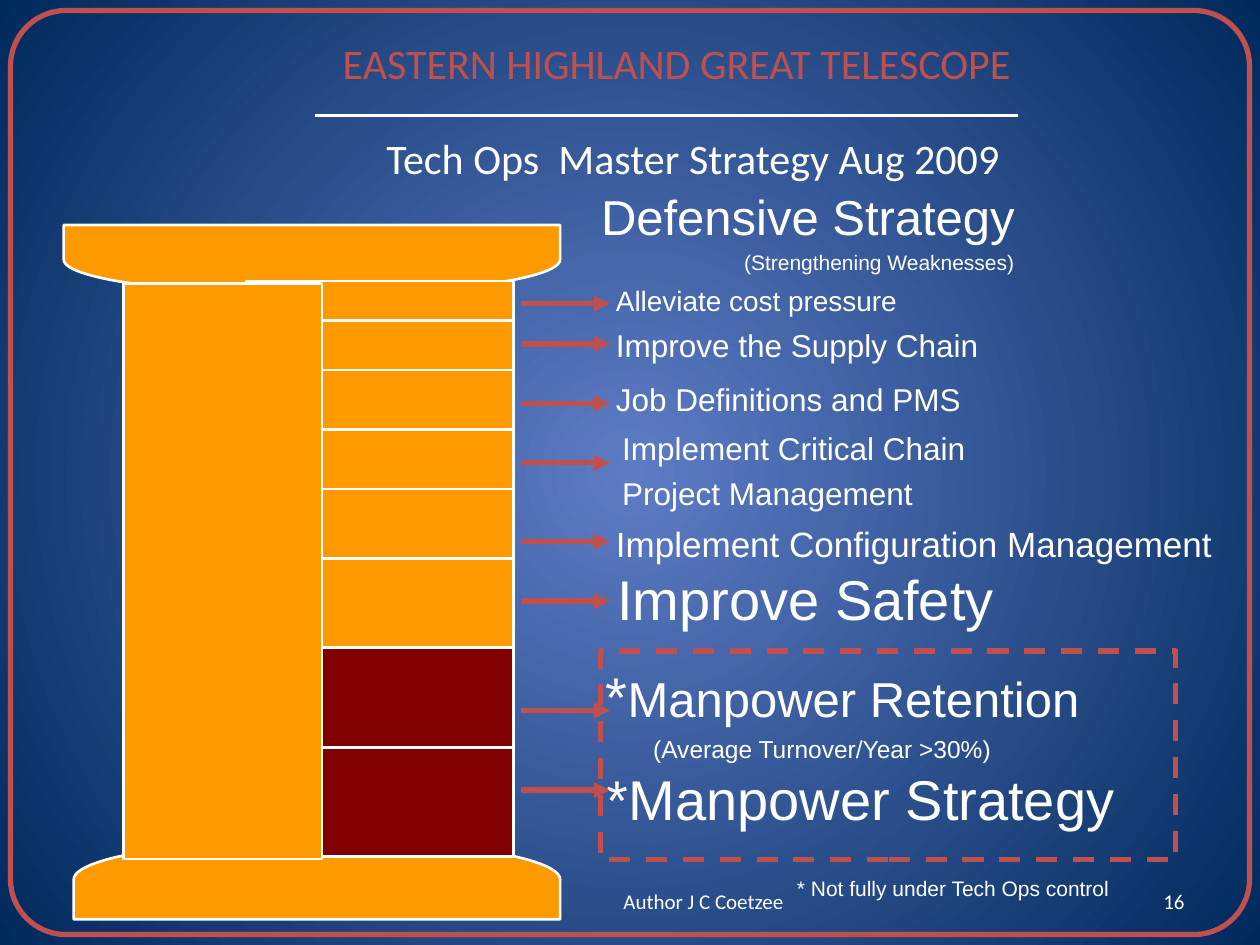
import pptx
import pptx.util
import pptx.dml.color
import pptx.oxml
import pptx.oxml.ns
from pptx.enum.dml import MSO_LINE
from pptx.enum.shapes import MSO_CONNECTOR, MSO_SHAPE
from pptx.enum.text import MSO_ANCHOR, MSO_AUTO_SIZE, PP_ALIGN

Pt = pptx.util.Pt
qn = pptx.oxml.ns.qn
WHITE, RED, ORANGE, MAROON = "FFFFFF", "C0504D", "FF9900", "800000"
L, C, R = PP_ALIGN.LEFT, PP_ALIGN.CENTER, PP_ALIGN.RIGHT
HANG = 27

TITLE = "EASTERN HIGHLAND GREAT TELESCOPE"

# text, size, alignment, (left, top, width, height), anchor
CALIBRI_TEXTS = [
    ("Author J C Coetzee", 12, C, (288, 500.4, 228, 28.8), MSO_ANCHOR.MIDDLE),
    ("16", 12, R, (516, 500.4, 168, 28.8), MSO_ANCHOR.MIDDLE),
    ("Tech Ops  Master Strategy Aug 2009", 24, C, (144, 72, 504, 36), MSO_ANCHOR.TOP),
]

# box, alignment, wraps, paragraphs of (text, size) runs
STRATEGIES = [
    ((339.8, 433.4, 307.4, 46), L, False, [[("*Manpower Strategy", 32)]]),
    ((339.1, 374.4, 344.9, 66.2), L, True,
     [[("*", 32), ("Manpower Retention", 28)],
      [("\t(Average Turnover/Year >30%)", 14)]]),
    ((345.6, 319, 231.8, 46), L, False, [[("Improve Safety", 32)]]),
    ((344.9, 295.2, 357.8, 31.7), L, False,
     [[("Implement Configuration Management", 20)]]),
    ((348.5, 241.9, 221, 54.7), L, True,
     [[("Implement Critical Chain", 18)], [("Project Management", 18)]]),
    ((344.9, 213.8, 213.8, 28.8), L, False, [[("Job Definitions and PMS", 18)]]),
    ((344.9, 182.9, 223.9, 28.8), L, False, [[("Improve the Supply Chain", 18)]]),
    ((344.9, 158.4, 190, 26.6), L, False, [[("Alleviate cost pressure", 16)]]),
    ((447.1, 496.8, 195.1, 21.6), C, False,
     [[("* Not fully under Tech Ops control", 12)]]),
    ((252, 103, 334.8, 115.9), R, True,
     [[("Defensive Strategy", 28)], [("(Strengthening Weaknesses)", 12)]]),
]

BLOCK_EDGES = [160.5, 183, 211.5, 245.5, 279.5, 319, 370, 427, 489.5]
BLOCK_LEFT, BLOCK_WIDTH, MAROON_BLOCKS = 140.5, 153, 2
ARROW_YS = [173.5, 196.5, 230.5, 264.5, 309.5, 343.5, 406, 451.5]
ARROW_FROM, ARROW_TO = 297.5, 348.5


def rgb(color):
    return pptx.dml.color.RGBColor.from_string(color)


def set_line(line, color, width):
    line.color.rgb = rgb(color)
    line.width = Pt(width)


def add_box(kind, box, fill=None, line=WHITE, width=1.5, rotation=0):
    sp = s.shapes.add_shape(kind, *map(Pt, box))
    sp.shadow.inherit = False
    sp.rotation = rotation
    if fill:
        sp.fill.solid()
        sp.fill.fore_color.rgb = rgb(fill)
    else:
        sp.fill.background()
    set_line(sp.line, line, width)
    return sp


def add_line(x1, y1, x2, y2, color, width, arrow=False):
    cn = s.shapes.add_connector(MSO_CONNECTOR.STRAIGHT, *map(Pt, (x1, y1, x2, y2)))
    set_line(cn.line, color, width)
    props = cn._element.spPr
    if arrow:
        ln = props.find(qn("a:ln"))
        ln.append(ln.makeelement(qn("a:tailEnd"), {"type": "triangle"}))
    props.append(props.makeelement(qn("a:effectLst"), {}))


def fill_text(sp, paragraphs, align=L, font="Arial", color=WHITE, wrap=True,
              anchor=MSO_ANCHOR.TOP, grow=True, spaced=True, hang=0):
    """Write paragraphs of (text, size) runs; spaced puts 20% before each."""
    tf = sp.text_frame
    frame = {"word_wrap": wrap, "vertical_anchor": anchor,
             "auto_size": MSO_AUTO_SIZE.SHAPE_TO_FIT_TEXT if grow else MSO_AUTO_SIZE.NONE}
    for name, value in frame.items():
        setattr(tf, name, value)
    for i, runs in enumerate(paragraphs):
        p = tf.add_paragraph() if i else tf.paragraphs[0]
        p.alignment = align
        p.space_before = Pt(0)
        pPr = p._p.get_or_add_pPr()
        if spaced:
            before = pPr.find(qn("a:spcBef"))
            before.remove(before[0])
            before.append(before.makeelement(qn("a:spcPct"), {"val": "20000"}))
        if hang:
            pPr.set("marL", str(Pt(hang)))
            pPr.set("indent", str(-Pt(hang)))
        for text, size in runs:
            r = p.add_run()
            r.text = text
            for name, value in {"name": font, "size": Pt(size), "bold": False}.items():
                setattr(r.font, name, value)
            r.font.color.rgb = rgb(color)


def set_background():
    """Radial gradient from the slide's centre."""
    fill = s.background.fill
    fill.gradient()
    for stop, color in zip(fill.gradient_stops, ("5E7CC5", "00295C")):
        stop.color.rgb = rgb(color)
    grad = s._element.find(".//" + qn("a:gradFill"))
    linear = grad.find(qn("a:lin"))
    circle = grad.makeelement(qn("a:path"), {"path": "circle"})
    sides = dict.fromkeys("ltrb", "50000")
    circle.append(circle.makeelement(qn("a:fillToRect"), sides))
    grad.replace(linear, circle)


prs = pptx.Presentation()
prs.slide_width, prs.slide_height = Pt(720), Pt(540)
s = prs.slides.add_slide(prs.slide_layouts[5])
set_background()

title = s.shapes.title
title.left, title.top, title.width, title.height = map(Pt, (131.8, 18, 509.8, 36))
fill_text(title, [[(TITLE, 24)]], C, "Calibri", RED, spaced=False)
add_line(180, 66, 582, 66, WHITE, 2)
border = add_box(MSO_SHAPE.ROUNDED_RECTANGLE, (6, 6, 708, 528), line=RED, width=3)
border.adjustments[0] = 0.06

for text, size, align, box, anchor in CALIBRI_TEXTS:
    fill_text(s.shapes.add_textbox(*map(Pt, box)), [[(text, size)]], align, "Calibri",
              anchor=anchor, grow=False, spaced=anchor == MSO_ANCHOR.TOP)

# Pillar: base, capital, blocks, then the shaft in front
add_box(MSO_SHAPE.FLOWCHART_DELAY, (158.4, 363.6, 45.4, 278), ORANGE, rotation=270)
add_box(MSO_SHAPE.FLOWCHART_DELAY, (158.4, 6.5, 39.6, 283.7), ORANGE, rotation=90)
last_orange = len(BLOCK_EDGES) - 1 - MAROON_BLOCKS
for i, (top, bottom) in enumerate(zip(BLOCK_EDGES, BLOCK_EDGES[1:])):
    add_box(MSO_SHAPE.RECTANGLE, (BLOCK_LEFT, top, BLOCK_WIDTH, bottom - top),
            ORANGE if i < last_orange else MAROON)
add_box(MSO_SHAPE.RECTANGLE, (70.5, 162, 113.5, 329), ORANGE)

for box, align, wrap, paragraphs in STRATEGIES:
    fill_text(s.shapes.add_textbox(*map(Pt, box)), paragraphs, align,
              wrap=wrap, hang=HANG)

manpower_frame = add_box(MSO_SHAPE.RECTANGLE, (343, 372, 329, 119), line=RED, width=3)
manpower_frame.line.dash_style = MSO_LINE.DASH
for y in ARROW_YS:
    add_line(ARROW_FROM, y, ARROW_TO, y, RED, 3, arrow=True)

prs.save("out.pptx")
